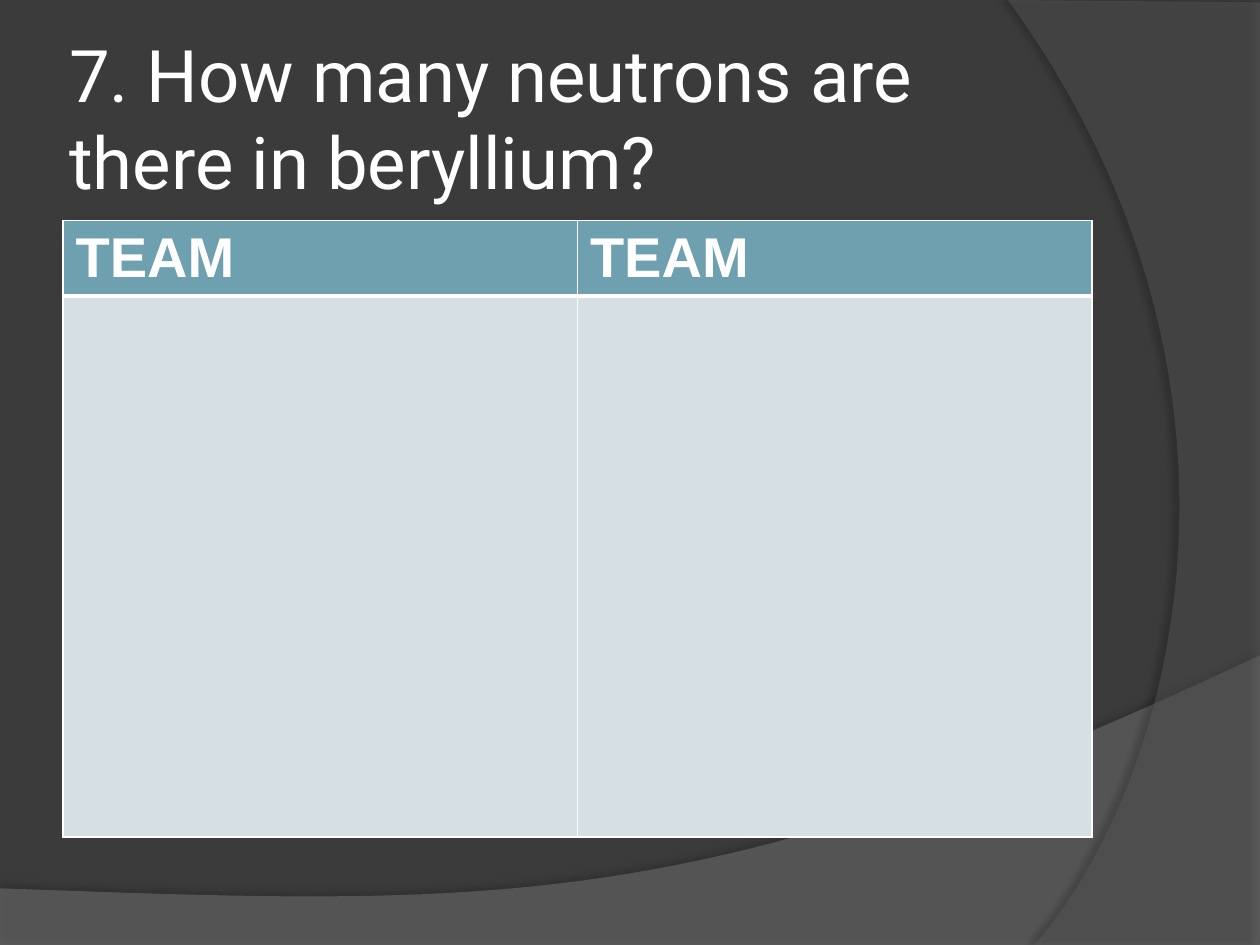
from dataclasses import dataclass

from lxml.etree import SubElement
from pptx import Presentation
from pptx.dml.color import RGBColor
from pptx.enum.text import MSO_ANCHOR, MSO_AUTO_SIZE, PP_ALIGN
from pptx.oxml.ns import qn
from pptx.util import Pt


@dataclass(frozen=True)
class Theme:
    """Colours, fonts and type sizes of the quiz slide."""

    background: str = "3B3B3B"
    wave: str = "7F7F7F"
    arc: str = "5E5E5E"
    shadow: str = "000000"
    text: str = "FFFFFF"
    border: str = "FFFFFF"
    header: str = "6EA0B0"
    body: str = "D5DFE4"
    title_font: str = "Roboto"
    table_font: str = "Arial"
    title_size: float = 41.4
    table_size: float = 32


def bezier(start, first, second, end, steps=48):
    """Return points along a cubic curve, without its start."""
    points = []
    for step in range(1, steps + 1):
        t = step / steps
        weights = ((1 - t) ** 3, 3 * t * (1 - t) ** 2, 3 * t * t * (1 - t), t ** 3)
        corners = (start, first, second, end)
        points.append(tuple(sum(w * c[axis] for w, c in zip(weights, corners))
                            for axis in (0, 1)))
    return points


class QuizSlide:
    """Holds the theme and the current slide."""

    def __init__(self, deck, theme):
        """Add a title-only page with a plain background."""
        self.theme = theme
        self.page = deck.slides.add_slide(deck.slide_layouts[5])
        self.fill(self.page.background.fill, theme.background)

    def fill(self, fill, colour):
        """Make a fill solid."""
        fill.solid()
        fill.fore_color.rgb = RGBColor.from_string(colour)

    def format(self, paragraph, font, size, bold=False):
        """Style the runs of a paragraph."""
        paragraph.alignment = PP_ALIGN.LEFT
        for span in paragraph.runs:
            span.font.name = font
            span.font.size = Pt(size)
            span.font.bold = bold
            span.font.color.rgb = RGBColor.from_string(self.theme.text)

    def title(self, text, left, top, width, height):
        """Place and format the title placeholder."""
        box = self.page.shapes.title
        box.left, box.top, box.width, box.height = map(Pt, (left, top, width, height))
        frame = box.text_frame
        frame.text = text
        frame.word_wrap = True
        frame.auto_size = MSO_AUTO_SIZE.NONE
        frame.vertical_anchor = MSO_ANCHOR.MIDDLE
        frame.margin_left = frame.margin_right = Pt(3.6)
        frame.margin_top = frame.margin_bottom = Pt(3.6)
        self.format(frame.paragraphs[0], self.theme.title_font, self.theme.title_size)

    def swoosh(self, points, colour, opacity, shadow_opacity, distance, angle):
        """Draw a translucent curved outline with a soft shadow."""
        start, *rest = [(Pt(x), Pt(y)) for x, y in points]
        builder = self.page.shapes.build_freeform(*start)
        builder.add_line_segments(rest, close=True)
        shape = builder.convert_to_shape()
        shape.line.fill.background()
        self.fill(shape.fill, colour)
        tint = shape._element.spPr.find(f"{qn('a:solidFill')}/{qn('a:srgbClr')}")
        SubElement(tint, qn("a:alpha"), val=str(opacity * 1000))
        shape.shadow.inherit = False
        effects = shape._element.spPr.find(qn("a:effectLst"))
        shadow = SubElement(effects, qn("a:outerShdw"), blurRad=str(Pt(4)),
                            dist=str(Pt(distance)), dir=str(angle * 60000),
                            algn="ctr", rotWithShape="0")
        shade = SubElement(shadow, qn("a:srgbClr"), val=self.theme.shadow)
        SubElement(shade, qn("a:alpha"), val=str(shadow_opacity * 1000))

    def borders(self, cell, **widths):
        """Give a cell its edge lines, in schema order."""
        properties = cell._tc.get_or_add_tcPr()
        for side in "LRTB":
            line = SubElement(properties, qn(f"a:ln{side}"), w=str(Pt(widths.get(side, 1))))
            paint = SubElement(line, qn("a:solidFill"))
            SubElement(paint, qn("a:srgbClr"), val=self.theme.border)

    def table(self, headings, left, top, width, row_heights):
        """Draw a heading row over an empty answer row."""
        table = self.page.shapes.add_table(
            len(row_heights), len(headings), Pt(left), Pt(top),
            Pt(width), Pt(sum(row_heights))).table
        for row, height in zip(table.rows, row_heights):
            row.height = Pt(height)
        for column, heading in enumerate(headings):
            head, answer = table.cell(0, column), table.cell(1, column)
            head.text = heading
            self.format(head.text_frame.paragraphs[0], self.theme.table_font,
                        self.theme.table_size, bold=True)
            self.borders(head, B=3)
            self.borders(answer, T=3)
            self.fill(head.fill, self.theme.header)
            self.fill(answer.fill, self.theme.body)


def main():
    """Build and save the slide."""
    deck = Presentation()
    deck.slide_width, deck.slide_height = Pt(720), Pt(540)
    theme = Theme()
    slide = QuizSlide(deck, theme)
    wave = [(0, 507.6), (0, 540.7), (720, 540.7), (720, 374.4)]
    wave += bezier((720, 374.4), (402.5, 524.9), (281.5, 517.7), (0, 507.6))
    slide.swoosh(wave, theme.wave, 45, 35, 3.5, 270)
    arc = [(720, 1.4), (720, 540), (591.1, 540)]
    arc += bezier((591.1, 540), (673.2, 445.7), (733, 216), (576, 0))
    slide.swoosh(arc, theme.arc, 40, 45, 4, 180)
    slide.title("7. How many neutrons are there in beryllium?", 36, 21.6, 588, 90)
    slide.table(["TEAM", "TEAM"], 36, 126, 588, [43.2, 309.2])
    deck.save("out.pptx")


if __name__ == "__main__":
    main()
